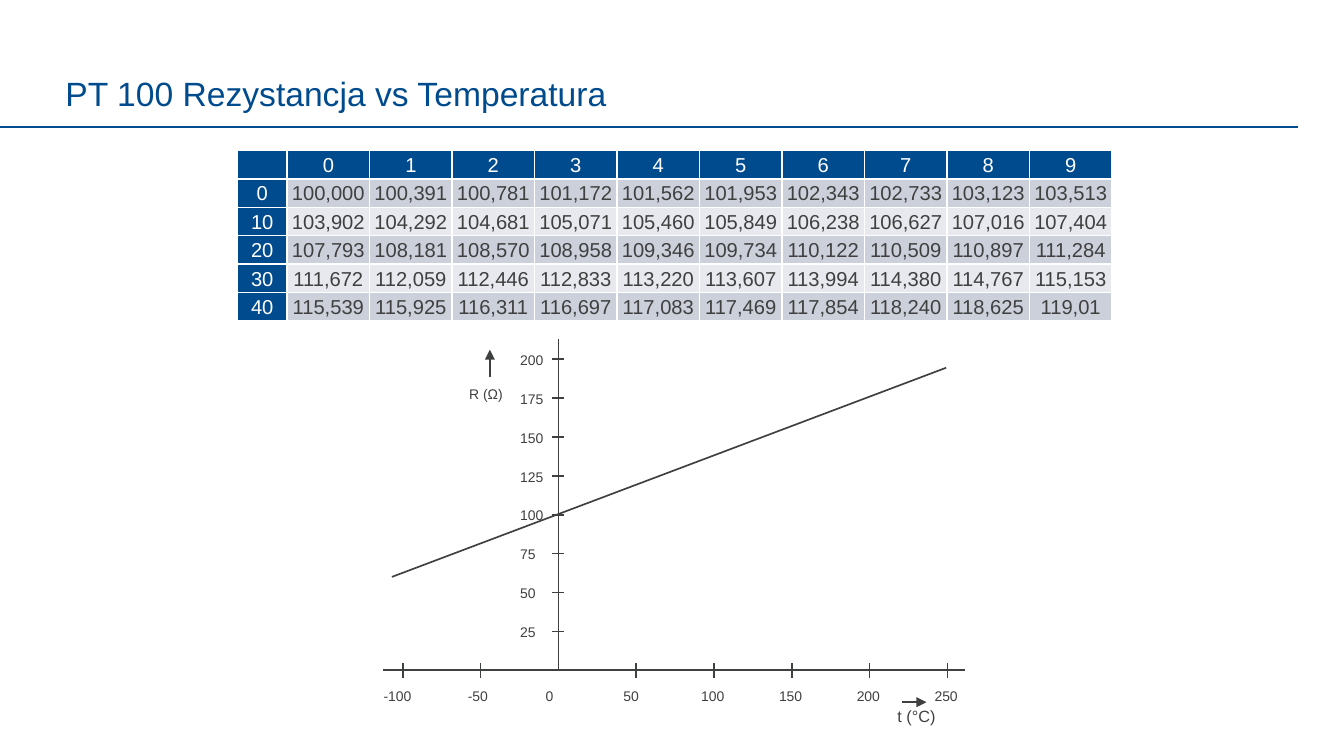
from lxml.etree import SubElement
from pptx import Presentation
from pptx.dml.color import RGBColor
from pptx.enum.shapes import MSO_CONNECTOR
from pptx.enum.text import MSO_ANCHOR as ANCHOR, PP_ALIGN as ALIGN
from pptx.oxml.ns import qn
from pptx.util import Pt

BLUE = RGBColor(0x00, 0x4B, 0x8D)
GREY = RGBColor(0x3F, 0x40, 0x40)
WHITE = RGBColor(0xFF, 0xFF, 0xFF)
BANDS = [RGBColor(0xE7, 0xE9, 0xEE), RGBColor(0xCC, 0xD0, 0xDB)]
FONT = "Arial"


def add_line(shapes, x1, y1, x2, y2, color=GREY, width=1, arrow=False):
    c = shapes.add_connector(MSO_CONNECTOR.STRAIGHT, Pt(x1), Pt(y1), Pt(x2), Pt(y2))
    c.line.color.rgb = color
    c.line.width = Pt(width)
    spPr = c._element.spPr
    if arrow:
        SubElement(spPr.find(qn("a:ln")), qn("a:tailEnd"), type="triangle")
    SubElement(spPr, qn("a:effectLst"))


def add_label(shapes, text, x, y, w, h=14.1, size=8.3):
    tf = shapes.add_textbox(Pt(x), Pt(y), Pt(w), Pt(h)).text_frame
    tf.word_wrap = False
    tf.margin_left = tf.margin_right = Pt(4.3)
    tf.margin_top = tf.margin_bottom = Pt(2.2)
    r = tf.paragraphs[0].add_run()
    r.text = text
    r.font.name, r.font.size = FONT, Pt(size)
    r.font.color.rgb = GREY


prs = Presentation()
prs.slide_width, prs.slide_height = Pt(800), Pt(450)
s = prs.slides.add_slide(prs.slide_layouts[5])

# Title and rule below it
add_line(s.shapes, 0, 75.6, 772.6, 75.6, BLUE, 0.75)
title = s.shapes.title
title.left, title.top, title.width, title.height = Pt(27.4), Pt(18), Pt(745.2), Pt(55.4)
tf = title.text_frame
tf.word_wrap = True
tf.vertical_anchor = ANCHOR.BOTTOM
tf.margin_left = tf.margin_right = Pt(11.5)
tf.margin_top = tf.margin_bottom = Pt(5.8)
p = tf.paragraphs[0]
p.alignment = ALIGN.LEFT
r = p.add_run()
r.text = "PT 100 Rezystancja vs Temperatura"
r.font.name, r.font.size = FONT, Pt(20)
r.font.color.rgb = BLUE

# Resistance chart: axes and characteristic
chart = s.shapes.add_group_shape().shapes
X0, Y0 = 332.4, 399
X_STEP, Y_STEP = 46.3, 23.15  # per 50 °C and per 25 Ω
add_line(chart, 228.2, Y0, 574.6, Y0)
add_line(chart, X0, Y0 + 0.6, X0, 201.6)
add_line(chart, 233.3, 343.4, 563.2, 218.9)

# Temperature ticks
for t in range(-100, 251, 50):
    x = X0 + t / 50 * X_STEP
    if t:
        add_line(chart, x, Y0 + 4.3, x, Y0 - 4.4)
    text = str(t)
    width = 8.7 + 4.6 * len(text) - (1.8 if t < 0 else 0)
    indent = 15.8 if t == -100 else 11.9
    add_label(chart, text, x - indent, 406.8, width)

# Resistance ticks
for ohm in range(25, 201, 25):
    y = Y0 - ohm / 25 * Y_STEP
    add_line(chart, X0 - 4, y, X0 + 3.2, y)
    text = str(ohm)
    add_label(chart, text, 305.3, y - 6.8, 8.7 + 4.6 * len(text))

# Axis names with arrows
add_label(chart, "R (Ω)", 275, 227.5, 39.6)
add_line(chart, 291.6, 224.6, 291.6, 208.1, arrow=True)
add_label(chart, "t (°C)", 529.9, 418.3, 31.7, 15.8, 9.7)
add_line(chart, 537.1, 418, 551.5, 418, arrow=True)

# Table of resistance by tens and units of temperature
rows = [
    ["", "0", "1", "2", "3", "4", "5", "6", "7", "8", "9"],
    ["0", "100,000", "100,391", "100,781", "101,172", "101,562",
     "101,953", "102,343", "102,733", "103,123", "103,513"],
    ["10", "103,902", "104,292", "104,681", "105,071", "105,460",
     "105,849", "106,238", "106,627", "107,016", "107,404"],
    ["20", "107,793", "108,181", "108,570", "108,958", "109,346",
     "109,734", "110,122", "110,509", "110,897", "111,284"],
    ["30", "111,672", "112,059", "112,446", "112,833", "113,220",
     "113,607", "113,994", "114,380", "114,767", "115,153"],
    ["40", "115,539", "115,925", "116,311", "116,697", "117,083",
     "117,469", "117,854", "118,240", "118,625", "119,01"],
]
table = s.shapes.add_table(len(rows), len(rows[0]), Pt(141.3), Pt(89.6),
                           Pt(520.6), Pt(101.4)).table
for j, column in enumerate(table.columns):
    column.width = Pt(49.1 if j else 29.6)
for i, values in enumerate(rows):
    table.rows[i].height = Pt(16.9)
    for j, value in enumerate(values):
        cell = table.cell(i, j)
        is_header = i == 0 or j == 0
        cell.vertical_anchor = ANCHOR.MIDDLE
        cell.margin_left = cell.margin_right = Pt(0.7)
        cell.margin_top = cell.margin_bottom = Pt(0.7)
        tcPr = cell._tc.get_or_add_tcPr()
        for side in ("lnL", "lnR", "lnT", "lnB"):
            ln = SubElement(tcPr, qn(f"a:{side}"), w=str(Pt(1)))
            SubElement(SubElement(ln, qn("a:solidFill")), qn("a:srgbClr"), val=str(WHITE))
        cell.fill.solid()
        cell.fill.fore_color.rgb = BLUE if is_header else BANDS[i % 2]
        p = cell.text_frame.paragraphs[0]
        p.alignment = ALIGN.CENTER
        p.line_spacing = 1.07
        if value:
            r = p.add_run()
            r.text = value
            r.font.name, r.font.size, r.font.bold = FONT, Pt(12), False
            r.font.color.rgb = WHITE if is_header else GREY
        else:
            SubElement(p._p, qn("a:endParaRPr"), sz="1200")

prs.save("out.pptx")
